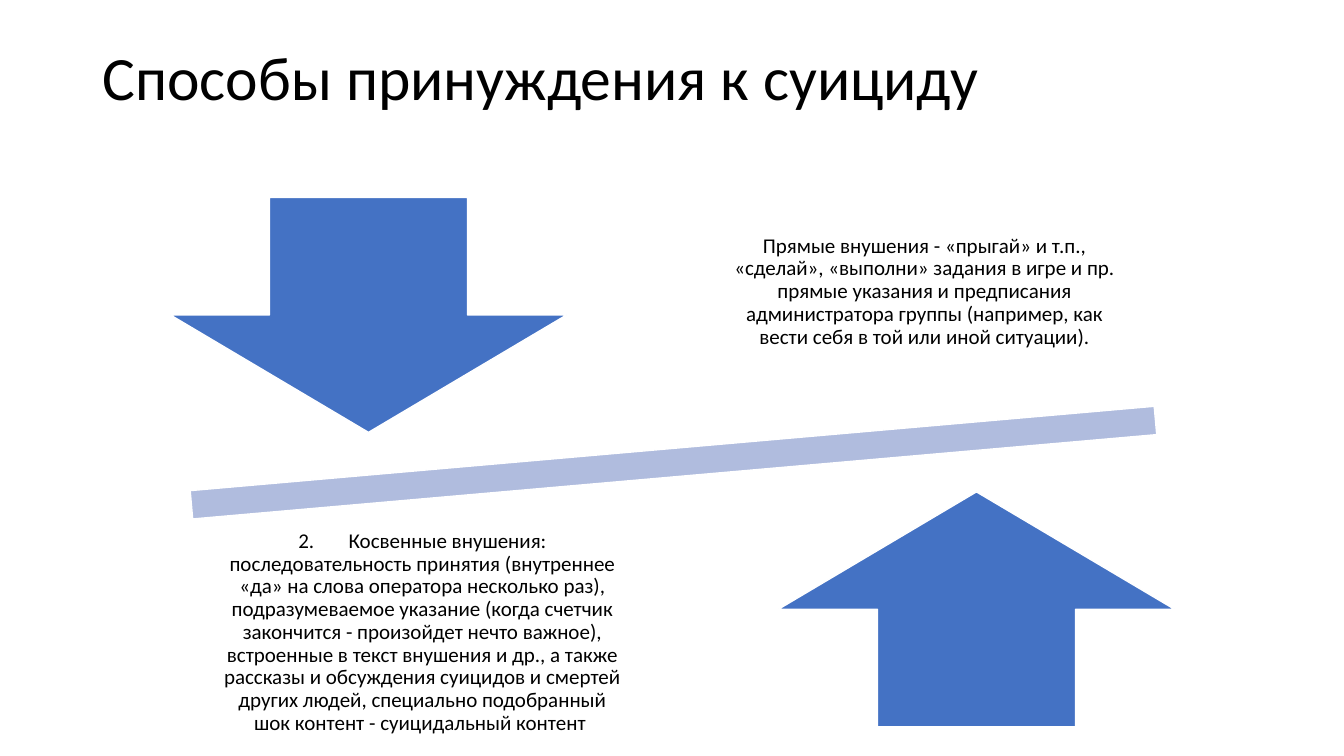
from pptx import Presentation
from pptx.dml.color import RGBColor
from pptx.enum.shapes import MSO_SHAPE
from pptx.enum.text import MSO_ANCHOR, PP_ALIGN
from pptx.util import Inches, Pt

BLACK = RGBColor(0x00, 0x00, 0x00)
WHITE = RGBColor(0xFF, 0xFF, 0xFF)
BLUE = RGBColor(0x44, 0x72, 0xC4)
PALE_BLUE = RGBColor(0xB0, 0xBC, 0xDE)

TITLE = "Способы принуждения к суициду"
DIRECT = (
    "Прямые внушения - «прыгай» и т.п., «сделай», «выполни» задания в игре и пр. "
    "прямые указания и предписания администратора группы "
    "(например, как вести себя в той или иной ситуации)."
)
INDIRECT = (
    "2.\tКосвенные внушения: последовательность принятия "
    "(внутреннее «да» на слова оператора несколько раз), "
    "подразумеваемое указание (когда счетчик закончится - произойдет нечто важное), "
    "встроенные в текст внушения и др., а также рассказы и обсуждения суицидов "
    "и смертей других людей, специально подобранный шок контент - суицидальный контент "
)


class SlideBuilder:
    font = "Calibri"
    line_spacing = 0.9

    def __init__(self, prs):
        self.slide = prs.slides.add_slide(prs.slide_layouts[6])

    def text(self, text, left, top, width, height, size, align, inset):
        sp = self.slide.shapes.add_textbox(
            Inches(left), Inches(top), Inches(width), Inches(height))
        tf = sp.text_frame
        tf.word_wrap = True
        tf.vertical_anchor = MSO_ANCHOR.MIDDLE
        tf.margin_left = tf.margin_right = Inches(inset)
        tf.margin_top = tf.margin_bottom = Inches(inset)
        p = tf.paragraphs[0]
        p.text = text
        p.alignment = align
        p.line_spacing = self.line_spacing
        for r in p.runs:
            r.font.name = self.font
            r.font.size = Pt(size)
            r.font.color.rgb = BLACK

    def title(self, text):
        self.text(text, 0.92, 0.07, 11.5, 1.45, 44, PP_ALIGN.LEFT, 0.1)

    def caption(self, text, left, top):
        self.text(text, left, top, 4.2, 2.45, 15, PP_ALIGN.CENTER, 0.12)

    def shape(self, kind, left, top, width, height, color, rotation=0):
        sp = self.slide.shapes.add_shape(
            kind, Inches(left), Inches(top), Inches(width), Inches(height))
        sp.shadow.inherit = False
        sp.rotation = rotation
        sp.fill.solid()
        sp.fill.fore_color.rgb = color
        sp.line.color.rgb = WHITE
        sp.line.width = Pt(1)

    def arrow(self, kind, left, top):
        self.shape(kind, left, top, 3.93, 2.33, BLUE)

    def balance_bar(self):
        self.shape(MSO_SHAPE.MATH_MINUS, 0.15, 3.99, 13.06, 1.2, PALE_BLUE, 355)


def main():
    prs = Presentation()
    prs.slide_width = Inches(13.33)
    prs.slide_height = Inches(7.5)
    s = SlideBuilder(prs)
    s.title(TITLE)
    s.balance_bar()
    s.arrow(MSO_SHAPE.DOWN_ARROW, 1.69, 1.96)
    s.caption(DIRECT, 7.07, 1.67)
    s.arrow(MSO_SHAPE.UP_ARROW, 7.72, 4.88)
    s.caption(INDIRECT, 2.09, 5.05)
    prs.save("out.pptx")


if __name__ == "__main__":
    main()
